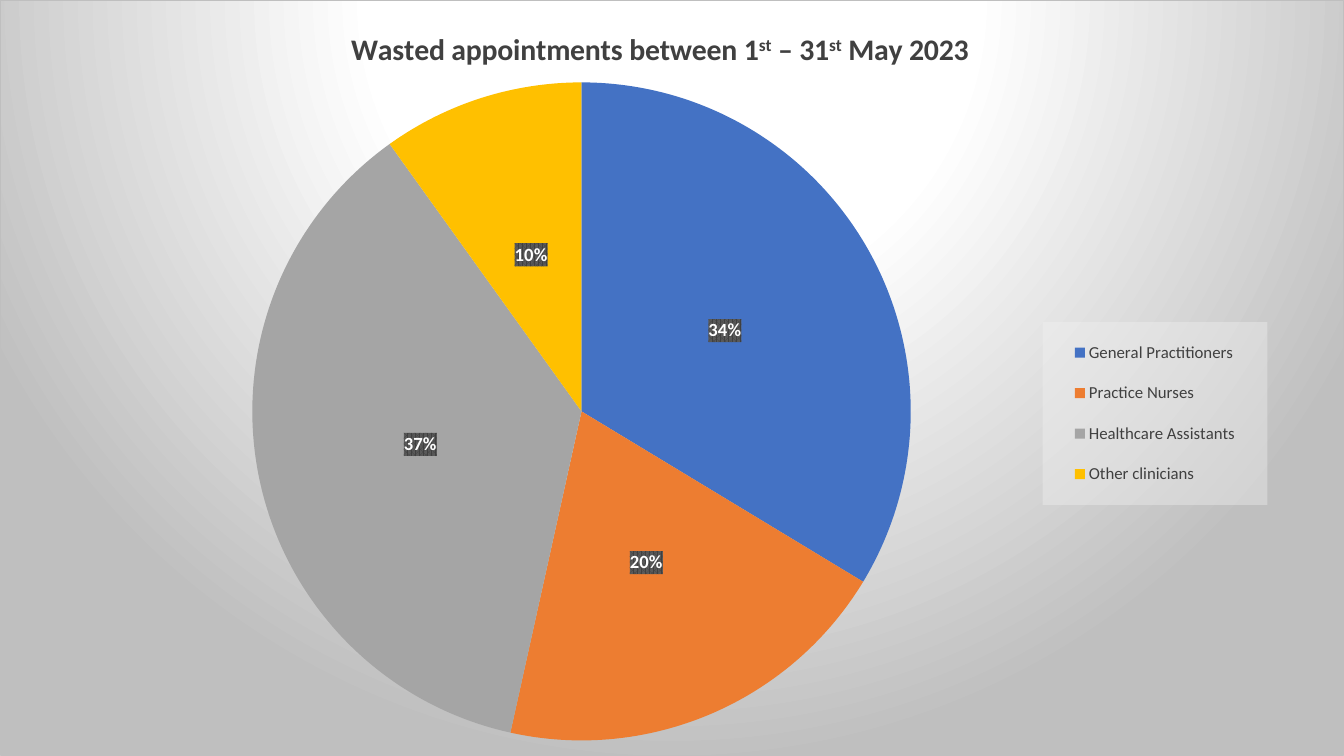
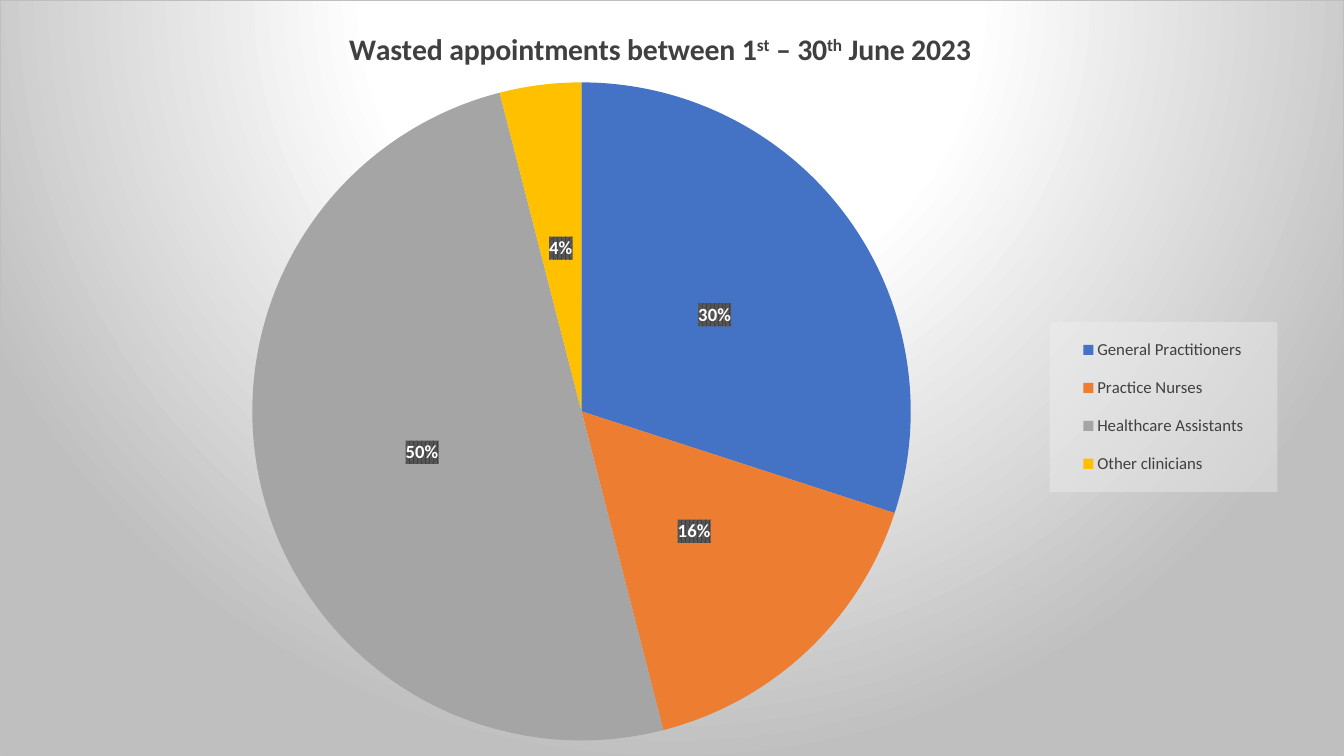
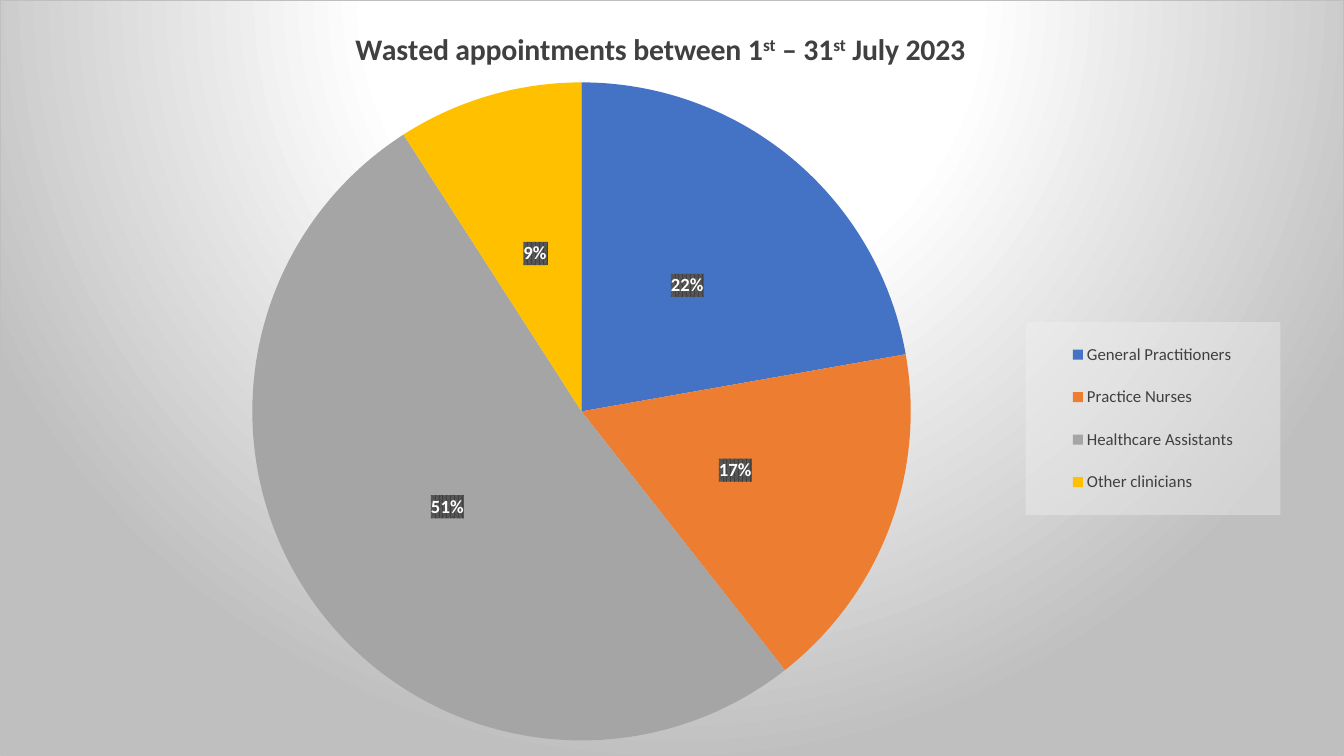
from lxml import etree
from pptx import Presentation
from pptx.chart.data import CategoryChartData
from pptx.dml.color import RGBColor
from pptx.enum.chart import XL_CHART_TYPE, XL_LABEL_POSITION, XL_LEGEND_POSITION
from pptx.oxml import parse_xml
from pptx.oxml.ns import nsdecls, qn
from pptx.util import Pt

PIE = XL_CHART_TYPE.PIE
CENTER = XL_LABEL_POSITION.CENTER
RIGHT = XL_LEGEND_POSITION.RIGHT

EMU_PER_PX = 12192000 / 1344
SLIDE_W, SLIDE_H = 1344, 756
FONT = "Calibri"
COLORS = {
    "white": "FFFFFF",
    "edge": "BFBFBF",
    "text": "404040",
    "legend": "F2F2F2",
    "label_dark": "404040",
    "label_light": "595959",
}
CLINICIANS = [
    ("General Practitioners", "4472C4"),
    ("Practice Nurses", "ED7D31"),
    ("Healthcare Assistants", "A5A5A5"),
    ("Other clinicians", "FFC000"),
]
PIE_BOX = (252, 82, 659, 659)
TITLE_TOP = 27
MONTHS = [
    {"last_day": ("31", "st"), "month": "May 2023", "shares": (34, 20, 37, 10),
     "title_left": 348, "legend": (1043, 322, 225, 183)},
    {"last_day": ("30", "th"), "month": "June 2023", "shares": (30, 16, 50, 4),
     "title_left": 346, "legend": (1050, 322, 228, 170)},
    {"last_day": ("31", "st"), "month": "July 2023", "shares": (22, 17, 51, 9),
     "title_left": 352, "legend": (1026, 322, 255, 193)},
]


def px(length):
    return round(length * EMU_PER_PX)


def style_font(font, size, color, bold=False):
    font.name = FONT
    font.size = Pt(size)
    font.bold = bold
    font.color.rgb = RGBColor.from_string(COLORS[color])


def add_text(paragraph, text, raised=False, **style):
    run = paragraph.add_run()
    run.text = text
    style_font(run.font, **style)
    if raised:
        run._r.get_or_add_rPr().set("baseline", "30000")


def color_xml(name, extra=""):
    return f'<a:srgbClr val="{COLORS[name]}">{extra}</a:srgbClr>'


def set_background(part, content):
    properties = parse_xml(f'<c:spPr {nsdecls("c", "a")}>{content}</c:spPr>')
    part.find(qn("c:txPr")).addprevious(properties)


def place(part, left, top, width=None, height=None, after=None, inner=False):
    for old in part.findall(qn("c:layout")):
        part.remove(old)
    layout = etree.Element(qn("c:layout"))
    manual = etree.SubElement(layout, qn("c:manualLayout"))
    settings = [("layoutTarget", "inner")] if inner else []
    settings += [("xMode", "edge"), ("yMode", "edge"),
                 ("x", round(left / SLIDE_W, 4)), ("y", round(top / SLIDE_H, 4))]
    if width:
        settings += [("w", round(width / SLIDE_W, 4)), ("h", round(height / SLIDE_H, 4))]
    for tag, value in settings:
        etree.SubElement(manual, qn(f"c:{tag}")).set("val", str(value))
    if after:
        part.find(qn(after)).addnext(layout)
    else:
        part.insert(0, layout)


def add_title(chart, month):
    chart.has_title = True
    title = chart.chart_title
    title.include_in_layout = False
    paragraph = title.text_frame.paragraphs[0]
    day, suffix = month["last_day"]
    pieces = [("Wasted appointments between 1", False), ("st", True),
              (f" – {day}", False), (suffix, True), (f" {month['month']}", False)]
    for text, raised in pieces:
        add_text(paragraph, text, raised, size=21.3, color="text", bold=True)
    place(title._element, month["title_left"], TITLE_TOP, after="c:tx")


def add_legend(chart, box):
    chart.has_legend = True
    legend = chart.legend
    legend.position = RIGHT
    legend.include_in_layout = False
    style_font(legend.font, 12, "text")
    fill = color_xml("legend", '<a:alpha val="39000"/>')
    set_background(legend._element, f"<a:solidFill>{fill}</a:solidFill>")
    place(legend._element, *box, after="c:legendPos")


def add_labels(plot):
    plot.has_data_labels = True
    labels = plot.data_labels
    labels.number_format = '0"%"'
    labels.number_format_is_linked = False
    labels.show_value = True
    labels.show_percentage = False
    labels.position = CENTER
    style_font(labels.font, 13.3, "white", bold=True)
    set_background(
        labels._element,
        f'<a:pattFill prst="pct75"><a:fgClr>{color_xml("label_dark")}</a:fgClr>'
        f'<a:bgClr>{color_xml("label_light")}</a:bgClr></a:pattFill>')


def add_month(prs, month):
    data = CategoryChartData(number_format="0")
    data.categories = [name for name, _ in CLINICIANS]
    data.add_series("Series 1", month["shares"])
    slide = prs.slides.add_slide(prs.slide_layouts[6])
    chart = slide.shapes.add_chart(PIE, 0, 0, px(SLIDE_W), px(SLIDE_H), data).chart
    style_font(chart.font, 10, "text")

    stops = "".join(f'<a:gs pos="{pos}000">{color_xml(name)}</a:gs>'
                    for pos, name in ((0, "white"), (39, "white"), (100, "edge")))
    set_background(
        chart._chartSpace,
        f'<a:gradFill><a:gsLst>{stops}</a:gsLst><a:path path="circle">'
        '<a:fillToRect l="50000" t="-80000" r="50000" b="180000"/></a:path></a:gradFill>'
        f'<a:ln w="9525"><a:solidFill>{color_xml("edge")}</a:solidFill></a:ln>')

    plot = chart.plots[0]
    plot.vary_by_categories = True
    for index, (_, color) in enumerate(CLINICIANS):
        slice_format = plot.series[0].points[index].format
        slice_format.fill.solid()
        slice_format.fill.fore_color.rgb = RGBColor.from_string(color)
        slice_format.line.fill.background()
    add_labels(plot)
    add_title(chart, month)
    add_legend(chart, month["legend"])
    place(chart._chartSpace.chart.plotArea, *PIE_BOX, inner=True)


def main():
    prs = Presentation()
    prs.slide_width, prs.slide_height = px(SLIDE_W), px(SLIDE_H)
    for month in MONTHS:
        add_month(prs, month)
    prs.save("out.pptx")


if __name__ == "__main__":
    main()
